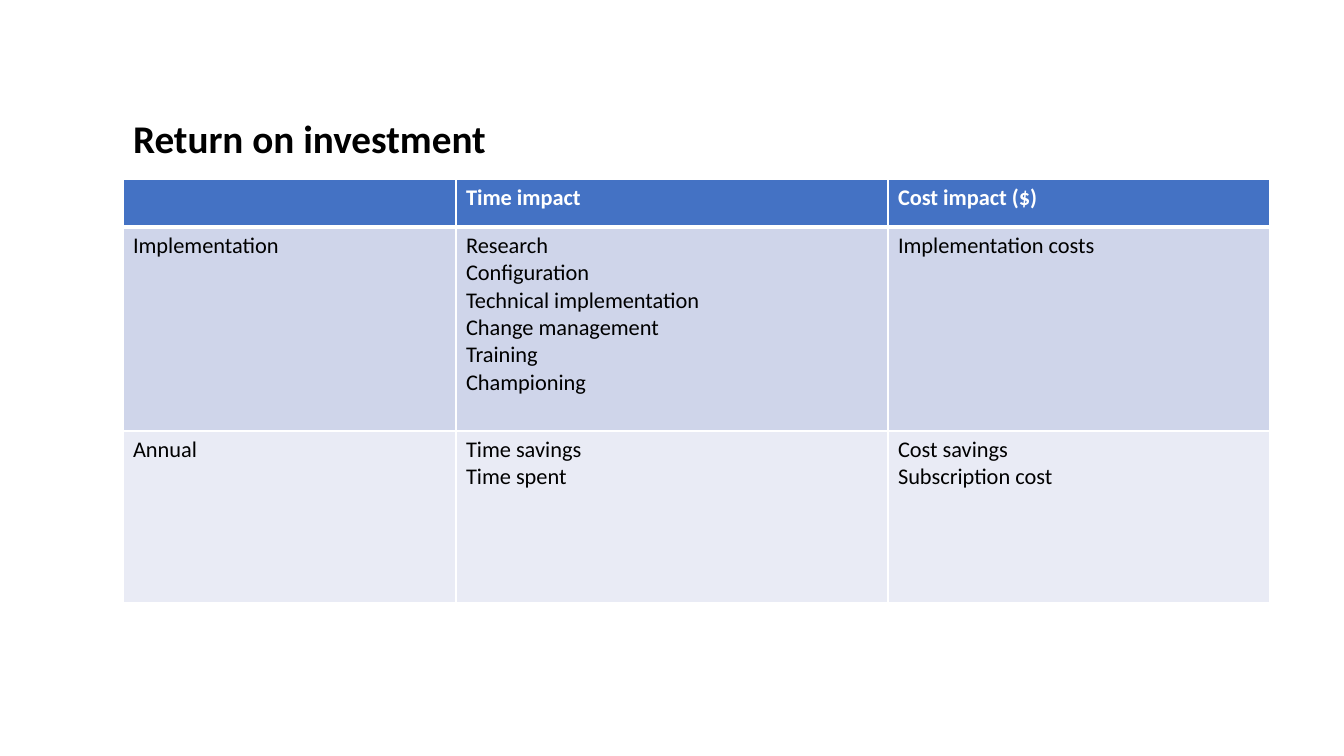
from lxml import etree
from pptx import Presentation
from pptx import util as u
from pptx.dml.color import RGBColor
from pptx.enum import text
from pptx.oxml import ns

PX = 914400 / 100.8
FONT = "Calibri"
BLACK = RGBColor(0x00, 0x00, 0x00)
WHITE = RGBColor(0xFF, 0xFF, 0xFF)
HEADER_BLUE = RGBColor(0x44, 0x72, 0xC4)
ROW_FILLS = [HEADER_BLUE, RGBColor(0xCF, 0xD5, 0xEA), RGBColor(0xE9, 0xEB, 0xF5)]

COLUMN_WIDTHS = [333, 432, 382]
ROW_HEIGHTS = [48, 204, 172]
IMPACTS = [
    [[], ["Time impact"], ["Cost impact ($)"]],
    [["Implementation"],
     ["Research", "Configuration", "Technical implementation",
      "Change management", "Training", "Championing"],
     ["Implementation costs"]],
    [["Annual"],
     ["Time savings", "Time spent"],
     ["Cost savings", "Subscription cost"]],
]


def px(length):
    return u.Emu(round(length * PX))


def style_font(font, size, color, bold):
    font.name = FONT
    font.size = u.Pt(size)
    font.bold = bold
    font.color.rgb = color


def add_title(slide, wording, left, top, width, height):
    title = slide.shapes.title
    title.left, title.top, title.width, title.height = map(
        px, (left, top, width, height))
    frame = title.text_frame
    frame.word_wrap = True
    frame.auto_size = text.MSO_AUTO_SIZE.NONE
    frame.vertical_anchor = text.MSO_ANCHOR.TOP
    paragraph = frame.paragraphs[0]
    paragraph.alignment = text.PP_ALIGN.LEFT
    paragraph.line_spacing = 0.9
    run = paragraph.add_run()
    run.text = wording
    style_font(run.font, 28, BLACK, True)


def set_borders(cell, widths):
    """Draw white borders; widths maps L, R, T, B to points."""
    properties = cell._tc.get_or_add_tcPr()
    for side, points in widths.items():
        line = etree.SubElement(properties, ns.qn(f"a:ln{side}"), w=str(u.Pt(points)))
        fill = etree.SubElement(line, ns.qn("a:solidFill"))
        etree.SubElement(fill, ns.qn("a:srgbClr"), val=str(WHITE))


def fill_cell(cell, lines, row):
    is_header = row == 0
    set_borders(cell, {"L": 1, "R": 1, "T": 3 if row == 1 else 1,
                       "B": 3 if is_header else 1})
    cell.fill.solid()
    cell.fill.fore_color.rgb = ROW_FILLS[row]
    frame = cell.text_frame
    frame.paragraphs[0].font.size = u.Pt(16)
    for index, line in enumerate(lines):
        paragraph = frame.add_paragraph() if index else frame.paragraphs[0]
        run = paragraph.add_run()
        run.text = line
        style_font(run.font, 16, WHITE if is_header else BLACK, is_header)


def add_impact_table(slide, left, top):
    frame = slide.shapes.add_table(
        len(ROW_HEIGHTS), len(COLUMN_WIDTHS), px(left), px(top),
        px(sum(COLUMN_WIDTHS)), px(sum(ROW_HEIGHTS)))
    table = frame.table
    for column, width in zip(table.columns, COLUMN_WIDTHS):
        column.width = px(width)
    for row, height in zip(table.rows, ROW_HEIGHTS):
        row.height = px(height)
    for row, cells in enumerate(IMPACTS):
        for column, lines in enumerate(cells):
            fill_cell(table.cell(row, column), lines, row)


def main():
    deck = Presentation()
    deck.slide_width, deck.slide_height = px(1344), px(756)
    slide = deck.slides.add_slide(deck.slide_layouts[5])
    add_title(slide, "Return on investment", 123, 115, 1070, 56)
    add_impact_table(slide, 123, 179)
    deck.save("out.pptx")


if __name__ == "__main__":
    main()
